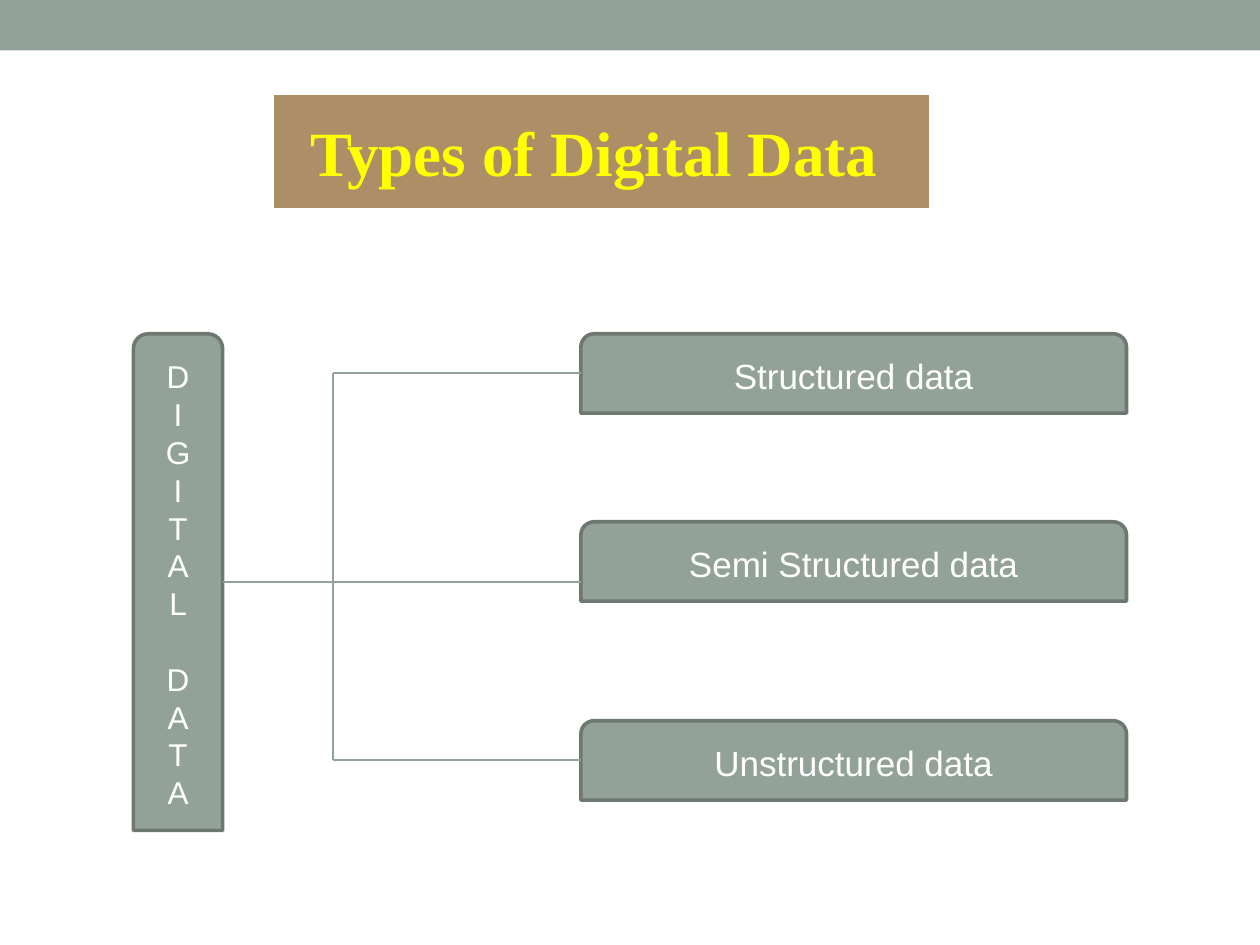
"""Build a slide that splits digital data into its three types."""
from lxml import etree
from pptx import Presentation
from pptx import util as u
from pptx.dml.color import RGBColor
from pptx.enum import shapes, text
from pptx.oxml import ns

SAGE = RGBColor(0x93, 0xA2, 0x99)
EDGE = RGBColor(0x6D, 0x78, 0x71)
TAN = RGBColor(0xAD, 0x8F, 0x67)
GOLD = RGBColor(0xFF, 0xFF, 0x00)
WHITE = RGBColor(0xFF, 0xFF, 0xFF)

RECT = shapes.MSO_SHAPE.RECTANGLE
TAB = shapes.MSO_SHAPE.ROUND_2_SAME_RECTANGLE


def draw(kind, place, fill, edge=None, width=0):
    box = slide.shapes.add_shape(kind, *map(u.Cm, place))
    box.shadow.inherit = False
    box.fill.solid()
    box.fill.fore_color.rgb = fill
    if edge is None:
        box.line.fill.background()
    else:
        box.line.color.rgb = edge
        box.line.width = u.Pt(width)
    return box


def write(box, rows, color, form):
    frame = box.text_frame
    frame.word_wrap = True
    frame.vertical_anchor = text.MSO_ANCHOR.MIDDLE
    frame.text = "\n".join(rows)
    for para in frame.paragraphs:
        para.alignment = text.PP_ALIGN.CENTER
        font = para.runs[0].font
        font.color.rgb = color
        for key, value in form.items():
            setattr(font, key, value)
    return frame.paragraphs


deck = Presentation()
deck.slide_width, deck.slide_height = u.Cm(25.4), u.Cm(19.05)
slide = deck.slides.add_slide(deck.slide_layouts[6])

draw(RECT, (0, 0, 25.4, 1.02), SAGE)

top, left = 6.73, 11.71
types = {
    "Structured data": top,
    "Semi Structured data": 10.52,
    "Unstructured data": 14.53,
}
for name, y in types.items():
    box = draw(TAB, (left, y, 11, 1.6), SAGE, EDGE, 2.08)
    write(box, [name], WHITE, {"name": "Arial", "size": u.Pt(20)})

words = ["DIGITAL", "DATA"]
root = draw(TAB, (2.69, top, 1.8, 10.01), SAGE, EDGE, 2.08)
paras = write(root, "".join(words), WHITE, {"name": "Arial", "size": u.Pt(18)})
pitch = u.Pt(21.6)
for para in paras:
    para.line_spacing = pitch
paras[len(words[0])].space_before = pitch

stem, high, mid, low = 6.71, 7.52, 11.73, 15.32
lines = [
    (4.49, mid, left, mid),
    (stem, high, stem, low),
    (stem, high, left, high),
    (stem, low, left, low),
]
for ends in lines:
    line = slide.shapes.add_connector(
        shapes.MSO_CONNECTOR.STRAIGHT, *map(u.Cm, ends))
    line.line.color.rgb = SAGE
    line.line.width = u.Pt(0.75)
    etree.SubElement(line._element.spPr, ns.qn("a:effectLst"))

title = draw(RECT, (5.46, 1.85, 13.34, 2.41), TAN, WHITE, 3.5)
write(title, ["Types of Digital Data "], GOLD,
      {"name": "Times New Roman", "size": u.Pt(36), "bold": True})

deck.save("out.pptx")
